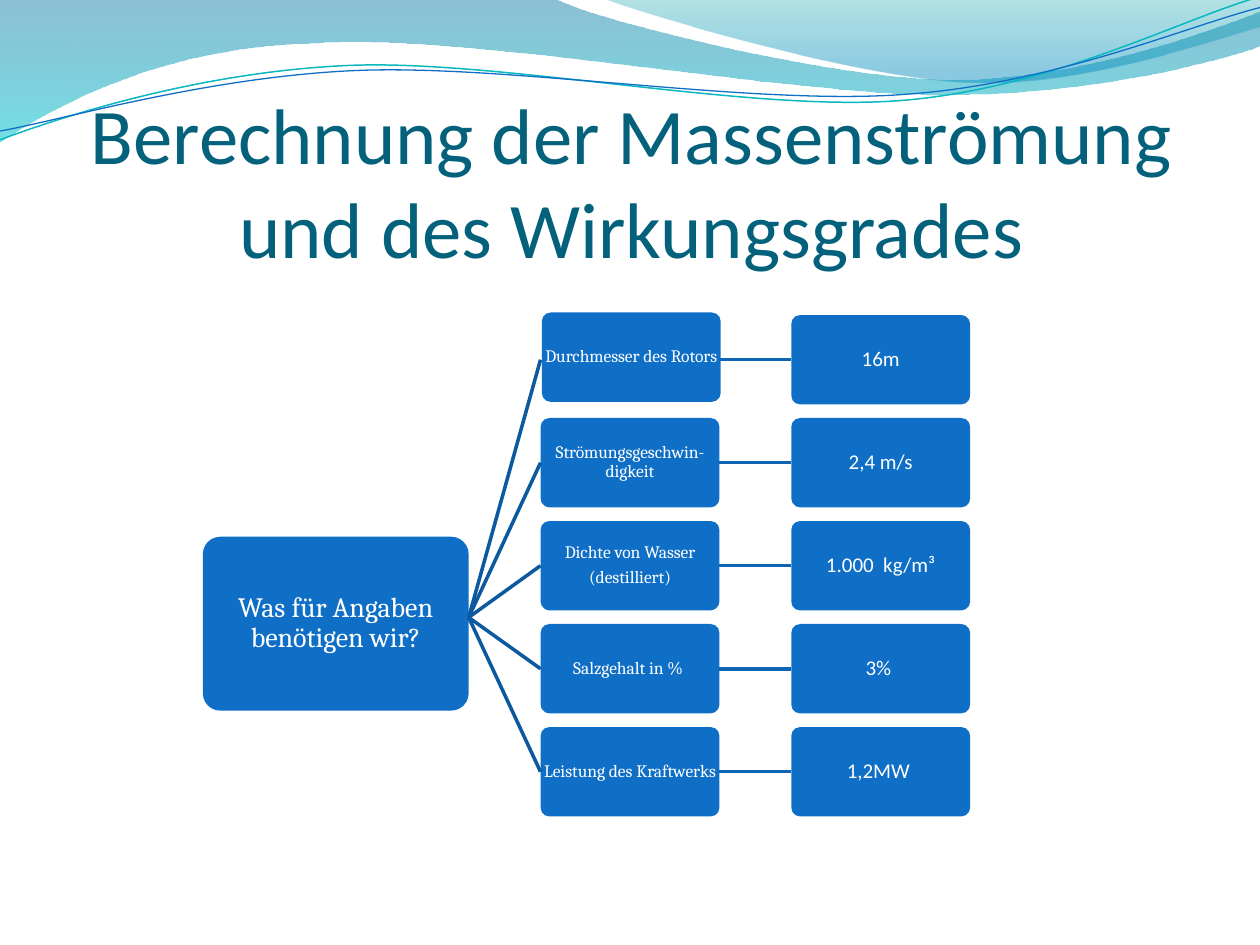
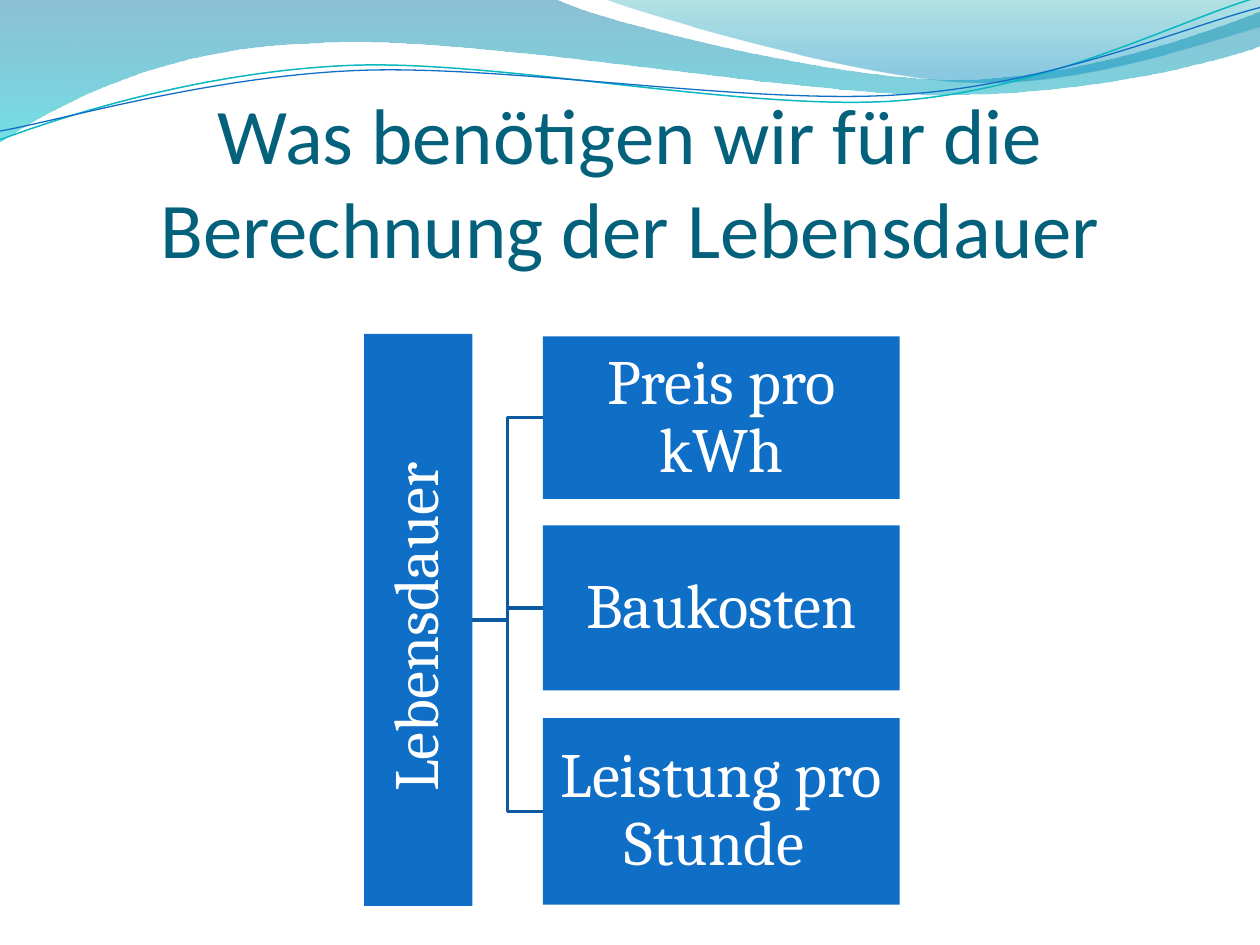
from dataclasses import dataclass
from typing import NamedTuple, Optional

from pptx import Presentation
from pptx.dml.color import RGBColor as RGB
from pptx.enum.shapes import MSO_CONNECTOR as LINK, MSO_SHAPE as SHAPE
from pptx.enum.text import MSO_ANCHOR as ANCHOR, MSO_AUTO_SIZE as AUTO, PP_ALIGN as ALIGN
from pptx.oxml.ns import qn
from pptx.oxml.xmlchemy import OxmlElement
from pptx.util import Inches, Pt


@dataclass(frozen=True)
class Theme:
    title_color: RGB = RGB.from_string("04617B")
    box_fill: RGB = RGB.from_string("0F6FC6")
    box_text: RGB = RGB.from_string("FFFFFF")
    branch: RGB = RGB.from_string("0C599F")
    value_link: RGB = RGB.from_string("0E65B4")
    teal_wave: RGB = RGB.from_string("0AB8BF")
    sans: str = "Calibri"
    serif: str = "Cambria"
    title_size: float = 45
    root_size: float = 16
    label_size: float = 10
    value_size: float = 12
    leaf_size: float = 36
    link_width: float = 2
    box_inset: float = 0.03
    corner: float = 0.1


THEME = Theme()
TITLE_ONLY = 5
LEFT, RIGHT = 1, 3
Point = tuple[float, float]


class Stop(NamedTuple):
    position: float
    color: str
    alpha: int


class Wave(NamedTuple):
    """An outline of segments: one point is a line, three are a cubic curve."""
    start: Point
    segments: list[tuple[Point, ...]]
    stops: tuple[Stop, ...] = ()
    color: Optional[RGB] = None
    width: float = 0


class Box(NamedTuple):
    text: str
    left: float
    top: float
    width: float
    height: float
    size: float
    font: str = THEME.serif
    shape: SHAPE = SHAPE.RECTANGLE
    rotation: float = 0


WAVES = [
    Wave((0, 0), [
        ((4.4, -0.01),),
        ((4.76, 0.17), (6.64, 0.63), (7.58, 0.63)),
        ((8.53, 0.63), (9.58, 0.26), (10, 0.09)),
        ((10.01, 0.36),),
        ((9.83, 0.44), (8.7, 0.76), (7.46, 0.75)),
        ((6.22, 0.75), (3.82, 0.28), (2.57, 0.34)),
        ((1.29, 0.36), (0.46, 0.83), (-0.01, 1.13)),
        ((0, 0),),
    ], stops=(Stop(0, "0074A1", 45), Stop(1, "00C6CF", 55))),
    Wave((4.79, -0.01), [
        ((5.09, 0.11), (6.82, 0.62), (7.69, 0.65)),
        ((8.56, 0.69), (9.61, 0.32), (10, 0.21)),
        ((10, 0),),
        ((4.79, -0.01),),
    ], stops=(Stop(0, "00A1A9", 30), Stop(0.8, "008BBF", 45))),
    Wave((0, 1.11), [
        ((0.48, 0.93), (1.58, 0.57), (2.77, 0.52)),
        ((3.95, 0.47), (5.93, 0.89), (7.13, 0.8)),
        ((8.33, 0.71), (9.38, 0.15), (9.98, -0.02)),
    ], color=THEME.teal_wave, width=0.85),
    Wave((0, 1.04), [
        ((0.47, 0.96), (1.64, 0.61), (2.83, 0.56)),
        ((4.03, 0.51), (5.97, 0.84), (7.17, 0.75)),
        ((8.36, 0.67), (9.41, 0.21), (10, 0.06)),
    ], color=THEME.box_fill, width=0.75),
]


def bend_segments(sp, segments: list[tuple[Point, ...]]) -> None:
    """Merge the three straight steps of each cubic segment into one curve."""
    steps = iter(list(sp.element.iter(qn("a:lnTo"))))
    for segment in segments:
        first, *others = [next(steps) for _ in segment]
        if others:
            curve = OxmlElement("a:cubicBezTo")
            first.addprevious(curve)
            for step in (first, *others):
                curve.append(step[0])
                step.getparent().remove(step)


def draw_wave(slide, wave: Wave):
    builder = slide.shapes.build_freeform(*map(Inches, wave.start))
    builder.add_line_segments(
        [(Inches(x), Inches(y)) for segment in wave.segments for x, y in segment],
        close=bool(wave.stops))
    sp = builder.convert_to_shape()
    bend_segments(sp, wave.segments)
    sp.shadow.inherit = False
    if not wave.stops:
        sp.fill.background()
        sp.line.color.rgb = wave.color
        sp.line.width = Pt(wave.width)
        return sp
    sp.line.fill.background()
    sp.fill.gradient()
    sp.fill.gradient_angle = 270
    for target, stop in zip(sp.fill.gradient_stops, wave.stops):
        target.position = stop.position
        target.color.rgb = RGB.from_string(stop.color)
    for color, stop in zip(sp.element.spPr.iter(qn("a:srgbClr")), wave.stops):
        alpha = OxmlElement("a:alpha")
        alpha.set("val", str(stop.alpha * 1000))
        color.append(alpha)
    return sp


def add_waves_to_layout(slide) -> None:
    """Draw the waves with the slide's builder, then move them to its layout."""
    tree = slide.slide_layout.shapes.element
    for i, wave in enumerate(WAVES):
        tree.insert(2 + i, draw_wave(slide, wave).element)


def set_title(slide, text: str, left: float, top: float, width: float, height: float) -> None:
    title = slide.shapes.title
    title.left, title.top = Inches(left), Inches(top)
    title.width, title.height = Inches(width), Inches(height)
    tf = title.text_frame
    tf.text = text
    tf.word_wrap = True
    tf.auto_size = AUTO.NONE
    tf.vertical_anchor = ANCHOR.BOTTOM
    tf.margin_left = tf.margin_right = tf.margin_bottom = 0
    tf.margin_top = Inches(0.05)
    p = tf.paragraphs[0]
    p.alignment = ALIGN.CENTER
    font = p.runs[0].font
    font.name, font.size = THEME.sans, Pt(THEME.title_size)
    font.color.rgb = THEME.title_color


def add_box(slide, box: Box):
    sp = slide.shapes.add_shape(box.shape, Inches(box.left), Inches(box.top),
                                Inches(box.width), Inches(box.height))
    sp.rotation = box.rotation
    sp.shadow.inherit = False
    sp.fill.solid()
    sp.fill.fore_color.rgb = THEME.box_fill
    sp.line.fill.background()
    inset = THEME.box_inset
    if box.shape == SHAPE.ROUNDED_RECTANGLE:
        sp.adjustments[0] = THEME.corner
        inset = 0  # the rounded corners already hold the text off the edge
    tf = sp.text_frame
    tf.text = box.text
    tf.word_wrap = True
    tf.vertical_anchor = ANCHOR.MIDDLE
    tf.margin_left = tf.margin_right = Inches(inset)
    tf.margin_top = tf.margin_bottom = Inches(inset)
    for p in tf.paragraphs:
        p.alignment = ALIGN.CENTER
        p.line_spacing = 0.9
        p.space_after = Pt(0.35 * box.size)
        font = p.runs[0].font
        font.name, font.size = box.font, Pt(box.size)
        font.color.rgb = THEME.box_text
    return sp


def add_link(slide, kind: LINK, start: Point, end: Point,
             color: RGB, source=None, target=None) -> None:
    """Link two points, joined to the right of source and the left of target if given."""
    link = slide.shapes.add_connector(kind, *map(Inches, start + end))
    link.line.color.rgb = color
    link.line.width = Pt(THEME.link_width)
    link.element.spPr.append(OxmlElement("a:effectLst"))
    if source is not None:
        link.begin_connect(source, RIGHT)
    if target is not None:
        link.end_connect(target, LEFT)


def build_mass_flow(slide) -> None:
    set_title(slide, "Berechnung der Massenströmung und des Wirkungsgrades", 0.51, 1.31, 9, 0.87)
    rounded = SHAPE.ROUNDED_RECTANGLE
    add_box(slide, Box("Was für Angaben benötigen wir?", 1.61, 4.26, 2.11, 1.38,
                       THEME.root_size, shape=rounded))
    facts = [
        ("Durchmesser des Rotors", "16m"),
        ("Strömungsgeschwin-digkeit", " 2,4 m/s "),
        ("Dichte von Wasser\n(destilliert)", "1.000  kg/m³"),
        ("Salzgehalt in % ", "3% "),
        ("Leistung des Kraftwerks", "1,2MW "),
    ]
    first_top, last_top = 2.5, 5.77
    pitch = (last_top - first_top) / (len(facts) - 1)
    label_left, value_left, width, height = 4.29, 6.28, 1.42, 0.71
    fan_start = (3.72, 4.9)
    for i, (label, value) in enumerate(facts):
        top = first_top + i * pitch
        middle = top + height / 2
        nudged = i == 0  # the first label sits slightly off the grid
        dx, dy = (0.01, -0.02) if nudged else (0, 0)
        label_box = add_box(slide, Box(label, label_left + dx, top + dy, width, height,
                                       THEME.label_size, shape=rounded))
        value_box = add_box(slide, Box(value, value_left, top, width, height,
                                       THEME.value_size, THEME.sans, rounded))
        joined = None if nudged else label_box
        add_link(slide, LINK.STRAIGHT, fan_start, (label_left, middle),
                 THEME.branch, target=joined)
        add_link(slide, LINK.STRAIGHT, (label_left + width, middle), (value_left, middle),
                 THEME.value_link, joined, value_box)


def build_lifetime(slide) -> None:
    set_title(slide, "Was benötigen wir für die Berechnung der Lebensdauer", 0.5, 0.93, 9, 1.25)
    add_box(slide, Box("Lebensdauer ", 1.05, 4.49, 4.54, 0.86, THEME.leaf_size, rotation=270))
    factors = [
        ("Preis pro kWh", 2.67, 1.29),
        ("Baukosten", 4.17, 1.31),
        ("Leistung pro Stunde ", 5.7, 1.48),
    ]
    left, width = 4.31, 2.83
    for text, top, height in factors:
        leaf = add_box(slide, Box(text, left, top, width, height, THEME.leaf_size))
        add_link(slide, LINK.ELBOW, (3.75, 4.92), (left, top + height / 2),
                 THEME.branch, target=leaf)


def main() -> None:
    prs = Presentation()
    prs.slide_width, prs.slide_height = Inches(10), Inches(7.5)
    layout = prs.slide_layouts[TITLE_ONLY]
    mass_flow, lifetime = (prs.slides.add_slide(layout) for _ in range(2))
    add_waves_to_layout(mass_flow)
    build_mass_flow(mass_flow)
    build_lifetime(lifetime)
    prs.save("out.pptx")


if __name__ == "__main__":
    main()
